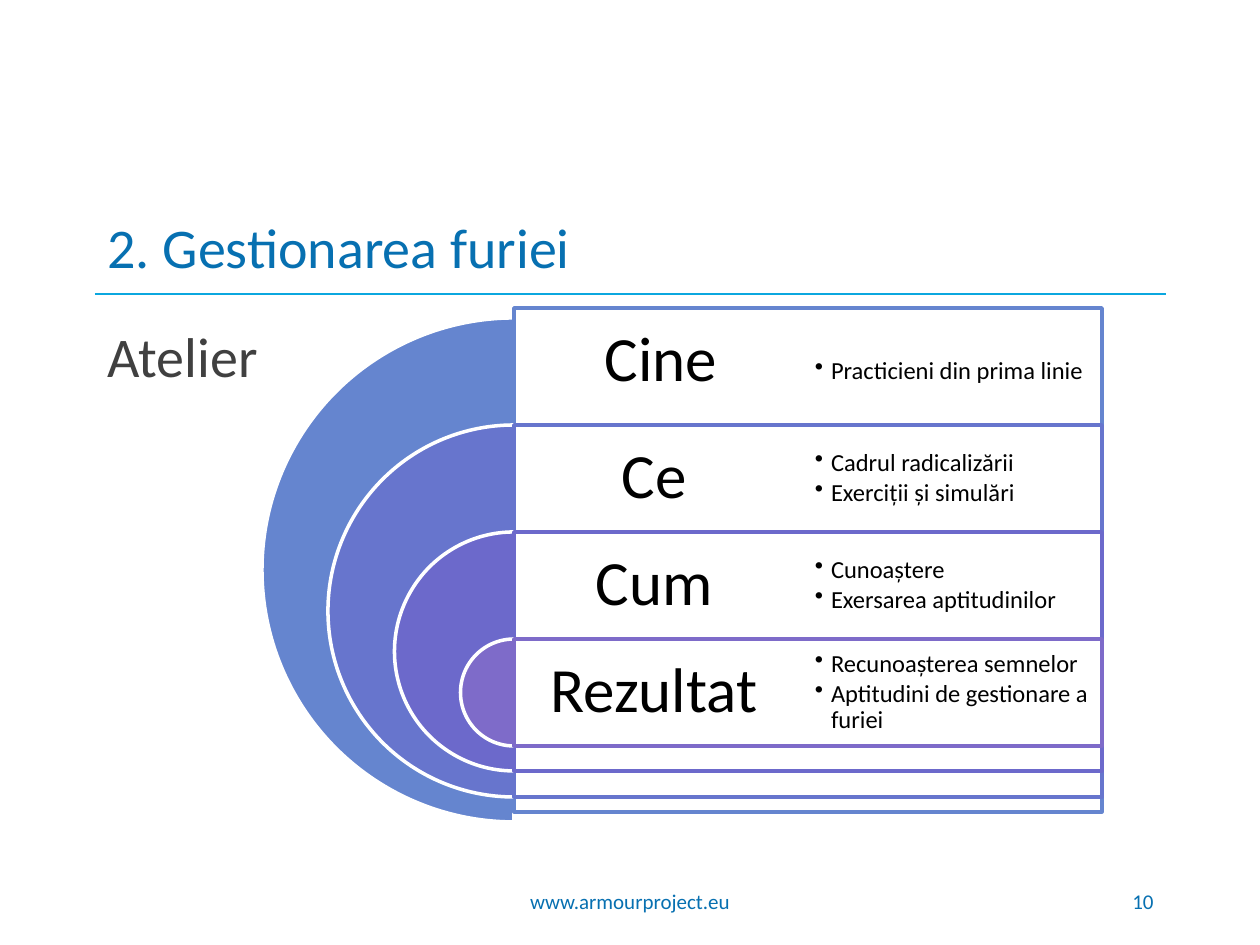
from lxml.etree import SubElement
from pptx import Presentation
from pptx.dml.color import RGBColor
from pptx.enum.shapes import MSO_CONNECTOR, MSO_SHAPE
from pptx.enum.text import MSO_ANCHOR, MSO_AUTO_SIZE, PP_ALIGN
from pptx.oxml.ns import qn
from pptx.util import Emu, Pt

FONT = "Calibri"
BLUE = RGBColor(0x07, 0x70, 0xB1)
CYAN = RGBColor(0x0B, 0xA7, 0xDF)
GREY = RGBColor(0x40, 0x40, 0x40)
BLACK = RGBColor(0, 0, 0)
WHITE = RGBColor(0xFF, 0xFF, 0xFF)

# Each ring: label, bullets, colour, top and diameter of its half disc
RINGS = [
    ("Cine", ["Practicieni din prima linie"],
     RGBColor(0x65, 0x85, 0xCF), 318, 504),
    ("Ce ", ["Cadrul radicalizării", "Exerciții și simulări"],
     RGBColor(0x67, 0x75, 0xCD), 425, 372),
    ("Cum ", ["Cunoaștere", "Exersarea aptitudinilor"],
     RGBColor(0x6C, 0x69, 0xCB), 532, 239),
    ("Rezultat ", ["Recunoașterea semnelor", "Aptitudini de gestionare a furiei"],
     RGBColor(0x7E, 0x6B, 0xC9), 639, 107),
]
AXIS_X, PANEL_W, ROW_H = 514, 588, 107
COLUMN_W = PANEL_W // 2
FIRST_PANEL_LIFT = 10


def px(n):
    return Emu(round(n * 914400 / 126))


def box(*lengths):
    return [px(n) for n in lengths]


def style(p, size, color, align=PP_ALIGN.LEFT):
    p.alignment = align
    for r in p.runs:
        r.font.name = FONT
        r.font.size = Pt(size)
        r.font.color.rgb = color


def fill_placeholder(sp, bounds, text, color, anchor):
    sp.left, sp.top, sp.width, sp.height = box(*bounds)
    tf = sp.text_frame
    tf.text = text
    tf.auto_size = MSO_AUTO_SIZE.NONE
    tf.vertical_anchor = anchor
    p = tf.paragraphs[0]
    pPr = p._p.get_or_add_pPr()
    pPr.set("marL", "0")
    pPr.set("indent", "0")
    SubElement(pPr, qn("a:buNone"))
    p.space_before = Pt(0)
    style(p, 32, color)


def add_text(slide, bounds, lines, size, color, align=PP_ALIGN.LEFT, inset=None):
    tf = slide.shapes.add_textbox(*box(*bounds)).text_frame
    tf.word_wrap = True
    tf.vertical_anchor = MSO_ANCHOR.MIDDLE
    if inset is not None:
        tf.margin_left = tf.margin_right = px(inset)
        tf.margin_top = tf.margin_bottom = px(inset)
    tf.text = "\n".join(lines)
    for p in tf.paragraphs:
        style(p, size, color, align)
    return tf


def add_bullets(slide, bounds, lines):
    tf = add_text(slide, bounds, lines, 14, BLACK, inset=7)
    for p in tf.paragraphs:
        pPr = p._p.get_or_add_pPr()
        pPr.set("marL", str(px(16)))
        pPr.set("indent", str(-px(16)))
        SubElement(pPr, qn("a:buChar")).set("char", "•")
        p.line_spacing = 0.9
        p.space_after = Pt(2)


def add_outlined(slide, kind, bounds, fill, line):
    sp = slide.shapes.add_shape(kind, *box(*bounds))
    sp.shadow.inherit = False
    sp.fill.solid()
    sp.fill.fore_color.rgb = fill
    sp.line.color.rgb = line
    sp.line.width = Pt(2)
    return sp


def add_ring(slide, label, color, top, size, lift):
    # Left half disc, its panel and the large label
    half = add_outlined(slide, MSO_SHAPE.PIE,
                        (AXIS_X - size / 2, top, size, size), color, WHITE)
    half.adjustments[0] = 54
    half.adjustments[1] = 162
    panel = add_outlined(slide, MSO_SHAPE.RECTANGLE,
                         (AXIS_X, top - lift, PANEL_W, size), WHITE, color)
    rgb = panel.fill._xPr.find(qn("a:solidFill"))[0]
    SubElement(rgb, qn("a:alpha")).set("val", "90000")
    tf = add_text(slide, (AXIS_X, top - lift, COLUMN_W, ROW_H), [label],
                  36, BLACK, PP_ALIGN.CENTER, inset=19)
    tf.paragraphs[0].line_spacing = 0.9


def add_rule(slide):
    line = slide.shapes.add_connector(MSO_CONNECTOR.STRAIGHT,
                                      *box(95, 294, 1166, 294))
    line.line.color.rgb = CYAN
    line.line.width = Pt(0.75)
    SubElement(line._element.spPr, qn("a:effectLst"))


def main():
    prs = Presentation()
    prs.slide_width, prs.slide_height = box(1260, 945)
    slide = prs.slides.add_slide(prs.slide_layouts[1])

    # Heading
    add_rule(slide)
    title, body = slide.placeholders
    fill_placeholder(title, (95, 199, 1071, 95), "2. Gestionarea furiei",
                     BLUE, MSO_ANCHOR.MIDDLE)
    fill_placeholder(body, (95, 315, 693, 514), "Atelier", GREY, MSO_ANCHOR.TOP)

    # Footer
    add_text(slide, (483, 876, 294, 50), ["www.armourproject.eu"],
             12, BLUE, PP_ALIGN.CENTER)
    add_text(slide, (903, 876, 263, 50), ["10"], 12, BLUE, PP_ALIGN.RIGHT)

    # Nested rings, then the bullets on top of all panels
    for i, (label, _, color, top, size) in enumerate(RINGS):
        add_ring(slide, label, color, top, size, 0 if i else FIRST_PANEL_LIFT)
    for _, bullets, _, top, _ in RINGS:
        add_bullets(slide, (AXIS_X + COLUMN_W, top, COLUMN_W, ROW_H), bullets)

    prs.save("out.pptx")


if __name__ == "__main__":
    main()
